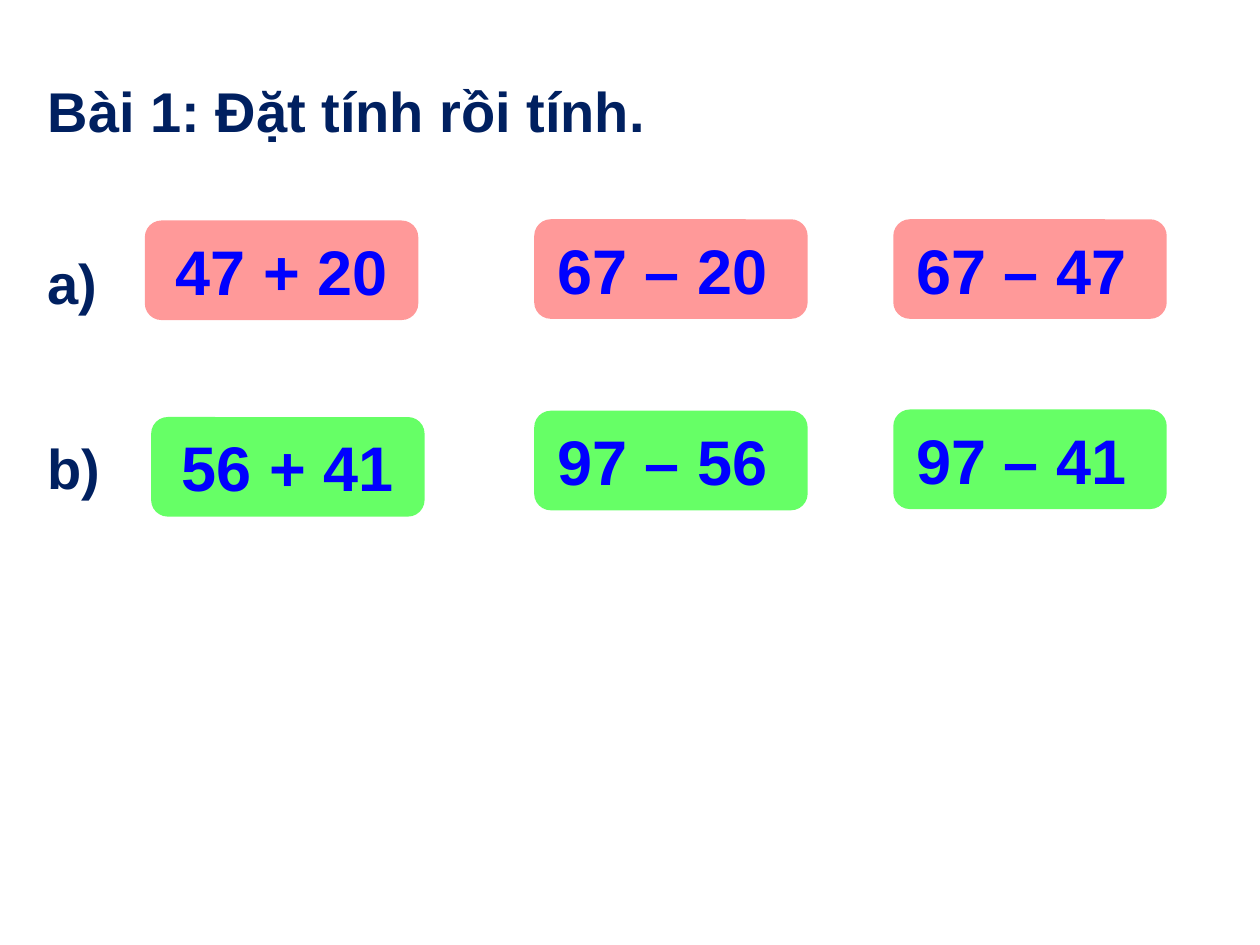
from pptx import Presentation
from pptx import util as u
from pptx.dml.color import RGBColor
from pptx.enum import shapes, text

theme = {
    "font": "Arial", "head": 32, "sum": 36,
    "navy": "002060", "blue": "0000FF", "pink": "FF9999", "green": "66FF66",
}

deck = Presentation()
deck.slide_width, deck.slide_height = u.Inches(10), u.Inches(7.5)
slide = deck.slides.add_slide(deck.slide_layouts[5])


def place(left, top, width, height):
    return [u.Inches(n) for n in (left, top, width, height)]


def write(shape, words, size, color, align, anchor, wrap=True):
    frame = shape.text_frame
    frame.text = words
    look = {"word_wrap": wrap, "vertical_anchor": anchor,
            "auto_size": text.MSO_AUTO_SIZE.NONE}
    for key, value in look.items():
        setattr(frame, key, value)
    para = frame.paragraphs[0]
    para.alignment = align
    font = para.runs[0].font
    style = {"name": theme["font"], "size": u.Pt(theme[size]), "bold": True}
    for key, value in style.items():
        setattr(font, key, value)
    font.color.rgb = RGBColor.from_string(theme[color])


left, mid = text.PP_ALIGN.LEFT, text.PP_ALIGN.CENTER
top, middle = text.MSO_ANCHOR.TOP, text.MSO_ANCHOR.MIDDLE
edge, line = 0.28, 0.64  # left margin, height of a heading line

# Title
title = slide.shapes.title
title.left, title.top, title.width, title.height = place(edge, 0.56, 5.18, line)
write(title, "Bài 1: Đặt tính rồi tính.", "head", "navy", left, top)

# Exercise rows: label, label top, fill, then each card's left, top and sum
rows = [
    ("a)", 1.92, "pink", [(1.15, 1.75, "47 + 20"),
                          (4.24, 1.74, "67 – 20 "),
                          (7.09, 1.74, "67 – 47 ")]),
    ("b)", 3.39, "green", [(1.2, 3.31, "56 + 41"),
                           (4.24, 3.26, "97 – 56 "),
                           (7.09, 3.25, "97 – 41 ")]),
]
for label, y, fill, cards in rows:
    # Row label
    box = slide.shapes.add_textbox(*place(edge, y, 0.74, line))
    write(box, label, "head", "navy", left, top, wrap=False)

    # Cards with the sums
    for x, y, words in cards:
        card = slide.shapes.add_shape(
            shapes.MSO_SHAPE.ROUNDED_RECTANGLE, *place(x, y, 2.17, 0.79))
        card.shadow.inherit = False
        card.fill.solid()
        card.fill.fore_color.rgb = RGBColor.from_string(theme[fill])
        card.line.fill.background()
        write(card, words, "sum", "blue", mid, middle)

deck.save("out.pptx")
